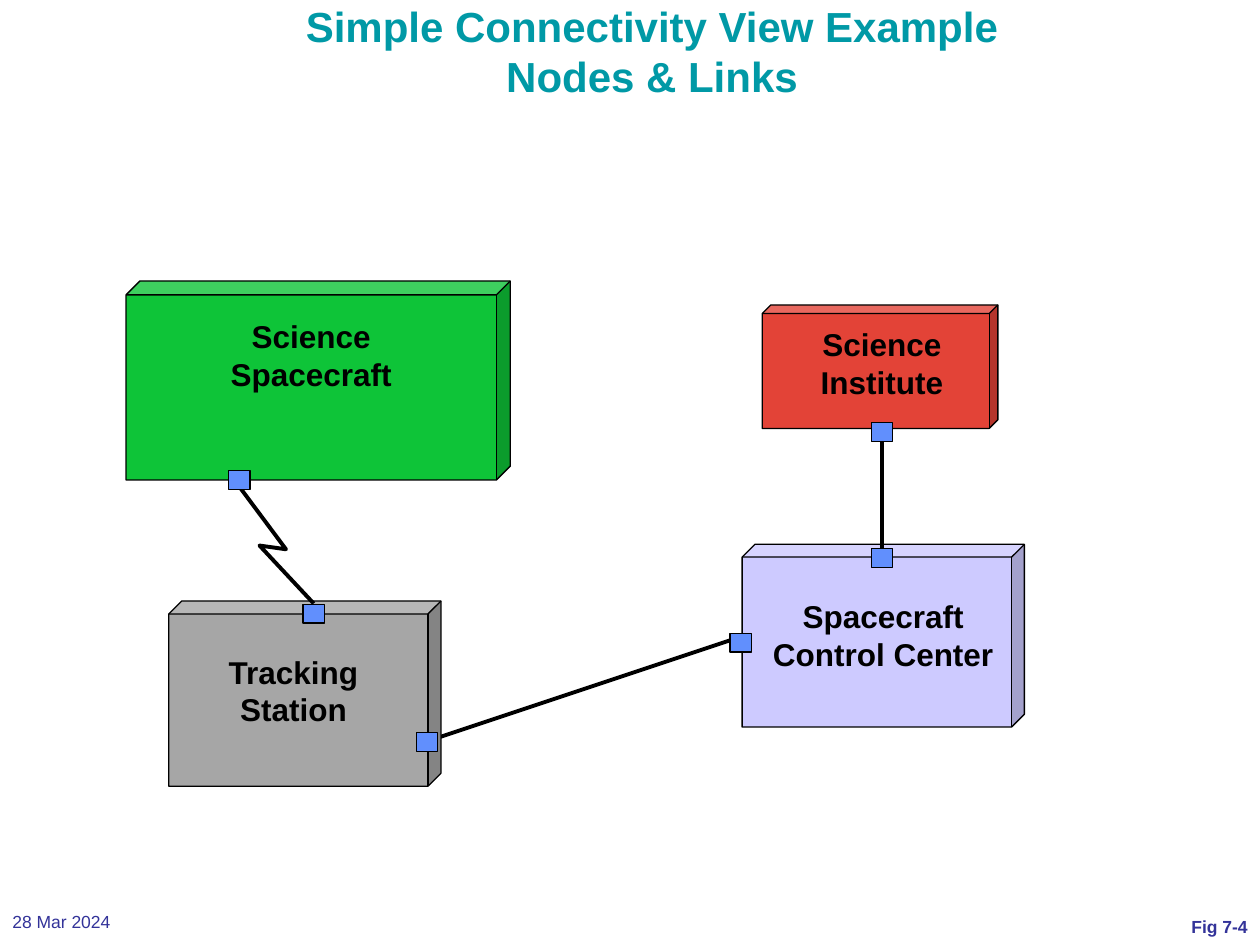
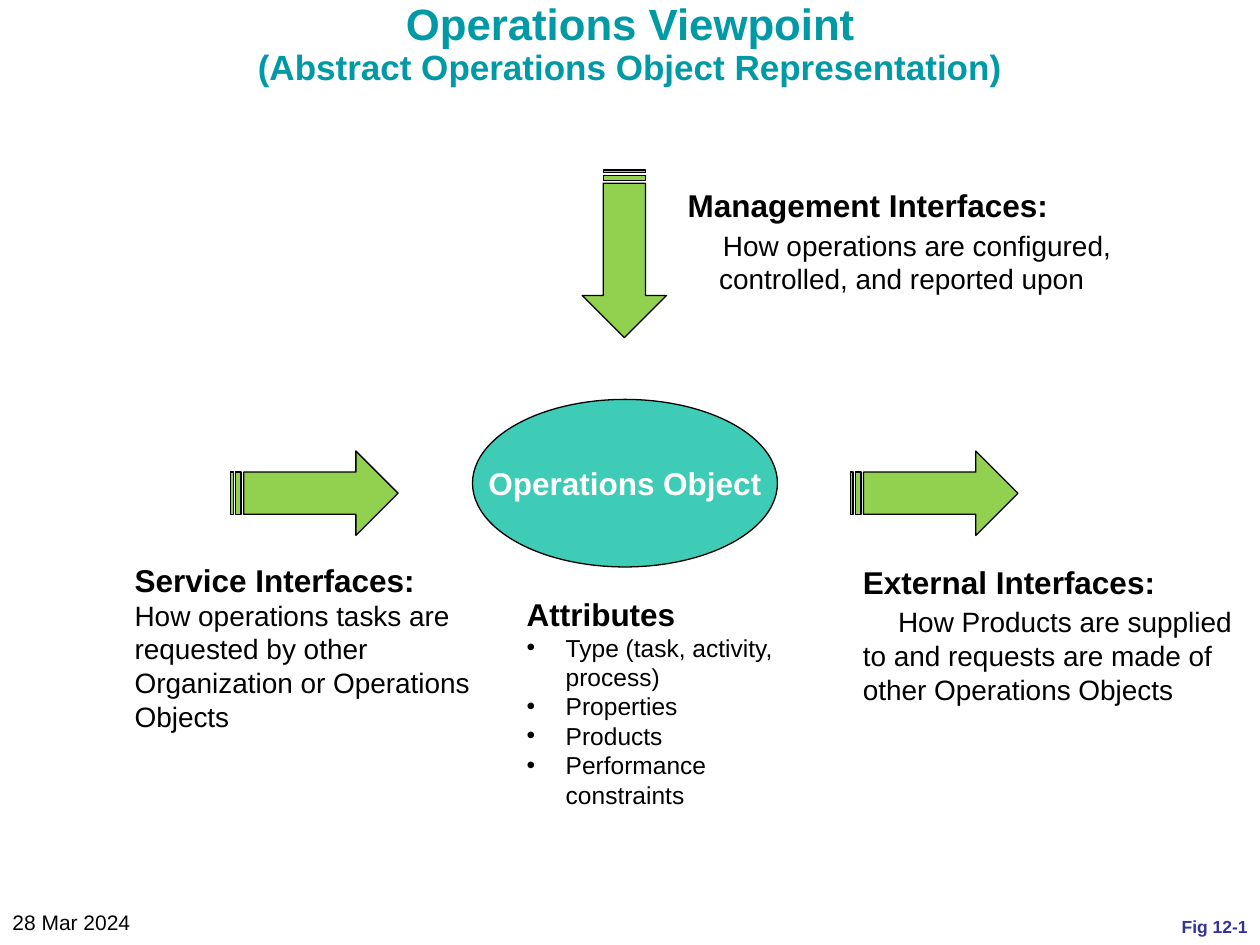
import pptx
import pptx.util
import pptx.dml.color
import pptx.enum.shapes
import pptx.enum.text
import pptx.oxml.xmlchemy
import lxml.etree
from dataclasses import dataclass, field

Pt = pptx.util.Pt
SHAPE = pptx.enum.shapes.MSO_SHAPE
ALIGN = pptx.enum.text.PP_ALIGN
ANCHOR = pptx.enum.text.MSO_ANCHOR


# Theme: type styles are (size, bold, colour)
@dataclass(frozen=True)
class Theme:
    font: str = "Arial"
    ink: str = "000000"
    port: str = "618FFD"
    arrow: str = "92D050"
    oval: str = "3FCCB6"
    outline: float = 0.75
    link: float = 2.25
    styles: dict = field(default_factory=lambda: {
        "title": (24, True, "0099A6"),
        "main title": (25, True, "0099A6"),
        "subtitle": (20, True, "0099A6"),
        "heading": (18, True, "000000"),
        "oval": (18, True, "FFFFFF"),
        "body": (16, False, "000000"),
        "bullet": (14, False, "000000"),
        "date": (10, False, "333399"),
        "large date": (12, False, "000000"),
        "figure": (10, True, "333399"),
    })


THEME = Theme()

# The slide is a grid of 10 columns by 7.5 rows; all places are in grid units
COLS, ROWS = 10, 7.5
DATE = "28 Mar 2024"
DATE_AT = (0, 7.17, 2.08, 0.29)
FIGURE_AT = (8.11, 7.21, 1.89, 0.29)

# Content: connectivity view
CONNECTIVITY = {
    "title": [("Simple Connectivity View Example", "title"),
              ("Nodes & Links", "title")],
    "title at": (2.14, -0.05, 6.07, 0.91),
    "date": "date",
    "figure": "Fig 7-4",
}
# Place, colour, label lines, label centre and label top
NODES = [
    ((1, 2.23, 3.05, 1.58), "0EC438", ["Science", "Spacecraft"], 2.47, 2.47),
    ((1.34, 4.77, 2.16, 1.47), "A6A6A6", ["Tracking", "Station"], 2.33, 5.13),
    ((6.05, 2.42, 1.87, 0.98), "E34337", ["Science", "Institute"], 7, 2.53),
    ((5.89, 4.32, 2.24, 1.45), "CDCAFF", ["Spacecraft", "Control Center"], 7.01, 4.69),
]
CUBE_DEPTH = 0.07
LABEL_SIZE = (2.96, 0.71)
PORT_SIZE = (0.17, 0.15)
PORT_CENTRES = [(1.9, 3.81), (2.49, 4.87), (3.39, 5.89),
                (5.88, 5.1), (7, 3.43), (7, 4.43)]
GROUND_LINK = ((3.4, 5.88), (5.8, 5.08))
INSTITUTE_LINK = ((7, 4.36), (7, 3.5))
RADIO_LINK = [(1.89, 3.85), (2.27, 4.36), (2.06, 4.33), (2.49, 4.79)]

# Content: operations viewpoint
OPERATIONS = {
    "title": [("Operations Viewpoint", "main title"),
              ("(Abstract Operations Object Representation)", "subtitle")],
    "title at": (1.29, -0.03, 7.42, 0.75),
    "date": "large date",
    "figure": "Fig 12-1",
}
OVAL = ("Operations Object", (3.75, 3.17, 2.42, 1.33))
ATTRIBUTES = ("Attributes", (4.08, 4.67, 2.42, 1.82),
              ["Type (task, activity, process)", "Properties", "Products",
               "Performance constraints"])
# Heading, place, paragraphs as (text, left margin, first-line indent)
INTERFACES = [
    ("External Interfaces:", (6.75, 4.42, 3.13, 1.25),
     [("How Products are supplied to and requests are made of other "
       "Operations Objects", 0, 0.28)]),
    ("Management Interfaces:", (5.36, 1.43, 4, 0.98),
     [("How operations are configured,", 0, 0.28),
      ("controlled, and reported upon", 0.25, 0)]),
    ("Service Interfaces:", (0.97, 4.4, 2.95, 1.48),
     [("How operations tasks are requested by other Organization or "
       "Operations Objects", 0, 0)]),
]
ARROW_SIZE = (1.33, 0.67)
ARROWS = [(4.29, 1.68, 90), (1.83, 3.58, 0), (6.75, 3.58, 0)]
BULLET_INDENT = 0.31
INDENTED_GAP = 2.3

prs = pptx.Presentation()
prs.slide_width = pptx.util.Inches(10)
prs.slide_height = pptx.util.Inches(7.5)


# Helpers
def grid(*units):
    """Turn alternating column and row values into slide lengths."""
    scale = (prs.slide_width / COLS, prs.slide_height / ROWS)
    return [round(u * scale[i % 2]) for i, u in enumerate(units)]


def colour(code):
    return pptx.dml.color.RGBColor.from_string(code)


def place(sp, at):
    sp.left, sp.top, sp.width, sp.height = grid(*at)


def write(tf, lines, align=ALIGN.LEFT, spacing=1.0, anchor=ANCHOR.TOP):
    """Fill a frame with (text, style) paragraphs."""
    tf.word_wrap = True
    tf.auto_size = pptx.enum.text.MSO_AUTO_SIZE.NONE
    tf.vertical_anchor = anchor
    tf.text = "\n".join(text for text, style in lines)
    for p, (text, style) in zip(tf.paragraphs, lines):
        size, bold, code = THEME.styles[style]
        p.alignment, p.line_spacing = align, spacing
        p.space_before = p.space_after = Pt(0)
        for r in p.runs:
            r.font.name, r.font.size, r.font.bold = THEME.font, Pt(size), bold
            r.font.color.rgb = colour(code)


def indent(p, margin, first, bullet=None):
    pPr = p._p.get_or_add_pPr()
    left, hang = grid(margin)[0], grid(first)[0]
    pPr.set("marL", str(left))
    pPr.set("indent", str(hang))
    ns = pptx.oxml.ns.qn
    if bullet:
        lxml.etree.SubElement(pPr, ns("a:buChar")).set("char", bullet)
    else:
        lxml.etree.SubElement(pPr, ns("a:buNone"))


def add_text(s, at, lines, **layout):
    sp = s.shapes.add_textbox(*grid(*at))
    write(sp.text_frame, lines, **layout)
    return sp.text_frame


def stroke(sp, width):
    sp.line.color.rgb = colour(THEME.ink)
    sp.line.width = Pt(width)


def add_shape(s, kind, at, fill):
    sp = s.shapes.add_shape(kind, *grid(*at))
    sp.shadow.inherit = False
    sp.fill.solid()
    sp.fill.fore_color.rgb = colour(fill)
    stroke(sp, THEME.outline)
    return sp


def add_link(s, start, end):
    sp = s.shapes.add_connector(pptx.enum.shapes.MSO_CONNECTOR.STRAIGHT,
                                *grid(*start, *end))
    stroke(sp, THEME.link)
    lxml.etree.SubElement(sp._element.spPr, pptx.oxml.ns.qn("a:effectLst"))


def add_slide(layout, content, spacing):
    """Start a slide with the shared title, date and figure number."""
    s = prs.slides.add_slide(prs.slide_layouts[layout])
    place(s.shapes.title, content["title at"])
    write(s.shapes.title.text_frame, content["title"], ALIGN.CENTER, spacing)
    add_text(s, DATE_AT, [(DATE, content["date"])],
             anchor=ANCHOR.MIDDLE if content["date"] == "date" else ANCHOR.TOP)
    add_text(s, FIGURE_AT, [(content["figure"], "figure")],
             align=ALIGN.RIGHT, anchor=ANCHOR.MIDDLE)
    return s


def build_connectivity():
    s = add_slide(5, CONNECTIVITY, 1.0)
    add_link(s, *GROUND_LINK)

    # Nodes and their labels
    width, height = LABEL_SIZE
    for at, fill, label, centre, top in NODES:
        sp = add_shape(s, SHAPE.CUBE, at, fill)
        sp.adjustments[0] = CUBE_DEPTH
        add_text(s, (centre - width / 2, top, width, height),
                 [(line, "heading") for line in label], align=ALIGN.CENTER)

    # Links over the nodes
    add_link(s, *INSTITUTE_LINK)
    first, *rest = [grid(*point) for point in RADIO_LINK]
    builder = s.shapes.build_freeform(*first)
    builder.add_line_segments(rest, close=False)
    sp = builder.convert_to_shape()
    sp.shadow.inherit = False
    sp.fill.background()
    stroke(sp, THEME.link)

    # Ports
    w, h = PORT_SIZE
    for x, y in PORT_CENTRES:
        add_shape(s, SHAPE.RECTANGLE, (x - w / 2, y - h / 2, w, h), THEME.port)


def build_operations():
    s = add_slide(1, OPERATIONS, 0.9)

    # Central object
    name, at = OVAL
    sp = add_shape(s, SHAPE.OVAL, at, THEME.oval)
    write(sp.text_frame, [(name, "oval")], ALIGN.CENTER, anchor=ANCHOR.MIDDLE)
    sp.text_frame.word_wrap = False

    # Attribute list
    heading, at, items = ATTRIBUTES
    body = s.placeholders[1]
    place(body, at)
    write(body.text_frame,
          [(heading, "heading")] + [(item, "bullet") for item in items])
    indent(body.text_frame.paragraphs[0], 0, 0)
    for p in body.text_frame.paragraphs[1:]:
        indent(p, BULLET_INDENT, -BULLET_INDENT, "•")

    # Interface descriptions
    for heading, at, details in INTERFACES:
        tf = add_text(s, at, [(heading, "heading")]
                      + [(text, "body") for text, margin, first in details])
        for p, (text, margin, first) in zip(tf.paragraphs[1:], details):
            indent(p, margin, first)
            if first:
                p.space_before = Pt(INDENTED_GAP)

    # Arrows
    for x, y, angle in ARROWS:
        sp = add_shape(s, SHAPE.STRIPED_RIGHT_ARROW, (x, y, *ARROW_SIZE), THEME.arrow)
        sp.rotation = angle


def main():
    build_connectivity()
    build_operations()
    prs.save("out.pptx")


if __name__ == "__main__":
    main()
